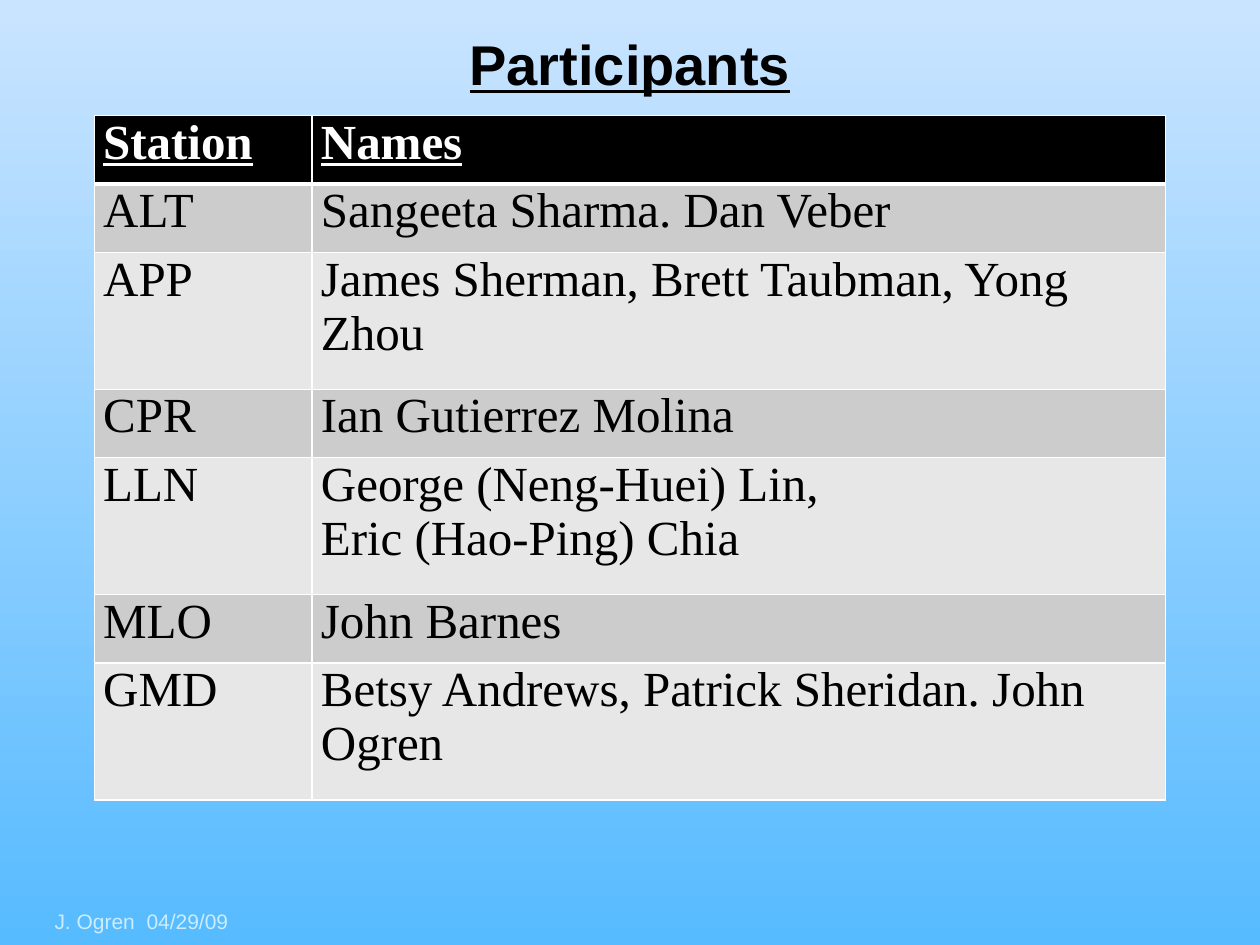
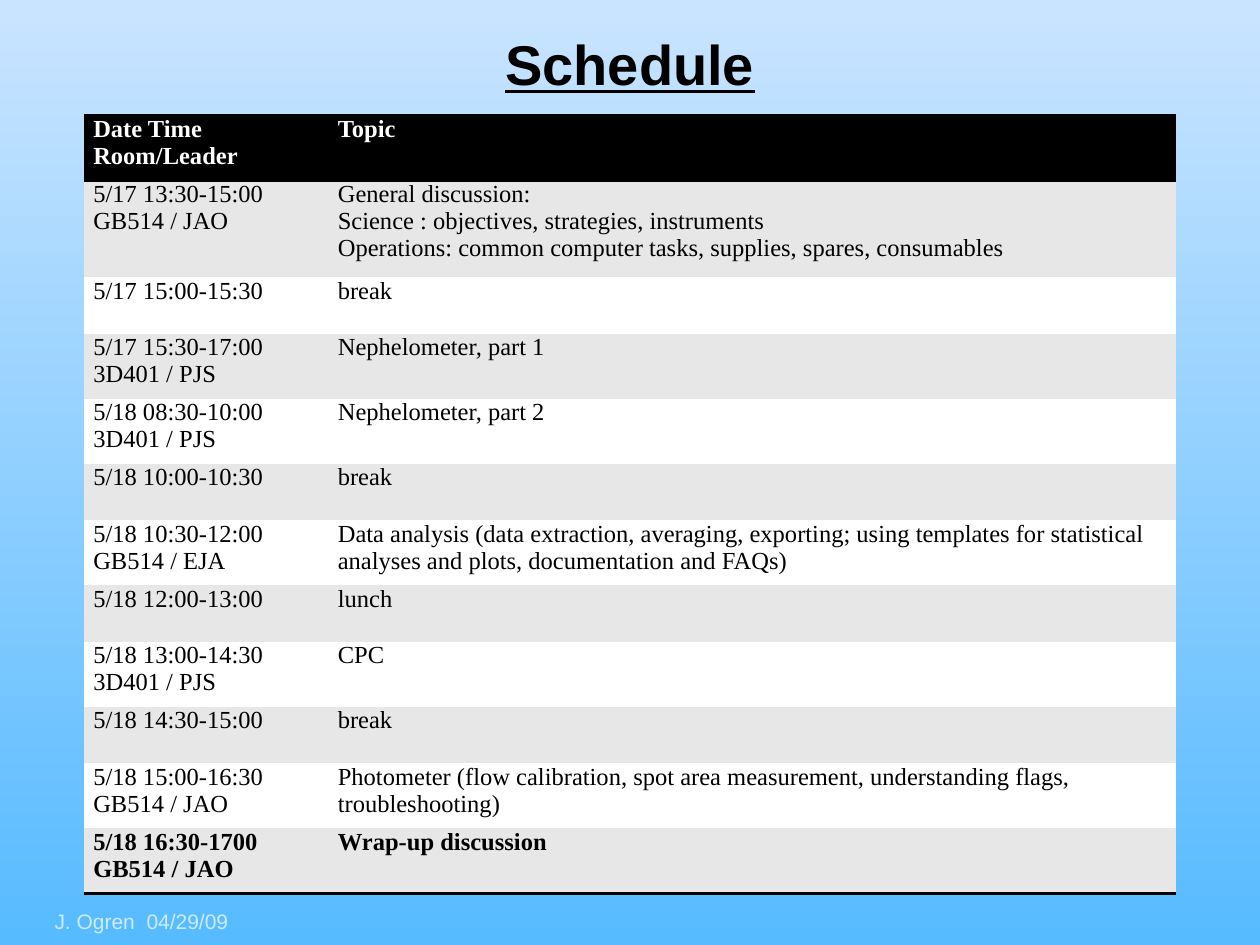
from pptx import Presentation
from pptx.dml.color import RGBColor
from pptx.enum.text import MSO_ANCHOR as Anchor, PP_ALIGN as Align
from pptx.oxml.ns import qn
from pptx.util import Cm, Pt
from lxml.etree import SubElement as Sub

# Shared look
BLACK = RGBColor(0x00, 0x00, 0x00)
WHITE = RGBColor(0xFF, 0xFF, 0xFF)
SILVER = RGBColor(0xCC, 0xCC, 0xCC)
PALE = RGBColor(0xE7, 0xE7, 0xE7)
ICE = RGBColor(0xCC, 0xEC, 0xFF)
SKY_TOP = RGBColor(0xC9, 0xE4, 0xFF)
SKY_BASE = RGBColor(0x57, 0xBB, 0xFF)
SANS, SERIF = "Arial", "Times New Roman"
PLAIN = "{2D5ABB26-0587-4C30-8999-92F81FD0307C}"  # table style without lines
SIDES = {"l": "a:lnL", "r": "a:lnR", "t": "a:lnT", "b": "a:lnB"}
TITLE_BOX = (0.85, 0.43, 23.7, 1.68)
FOOT_BOX = (0.85, 18.2, 5.08, 0.85)

# Participants: station, names, lines of text
PEOPLE = [
    ("Station", "Names", 1),
    ("ALT", "Sangeeta Sharma. Dan Veber", 1),
    ("APP", "James Sherman, Brett Taubman, Yong Zhou", 2),
    ("CPR", "Ian Gutierrez Molina", 1),
    ("LLN", "George (Neng-Huei) Lin,\vEric (Hao-Ping) Chia", 2),
    ("MLO", "John Barnes", 1),
    ("GMD", "Betsy Andrews, Patrick Sheridan. John Ogren", 2),
]
LINE = 1.38  # row height for each line of names

# Schedule: time and room, topic
PLAN = [
    ("Date Time\nRoom/Leader", "Topic"),
    ("5/17 13:30-15:00\nGB514 / JAO",
     "General discussion:\nScience : objectives, strategies, instruments\n"
     "Operations: common computer tasks, supplies, spares, consumables"),
    ("5/17 15:00-15:30", "break"),
    ("5/17 15:30-17:00\n3D401 / PJS", "Nephelometer, part 1"),
    ("5/18 08:30-10:00\n3D401 / PJS", "Nephelometer, part 2"),
    ("5/18 10:00-10:30", "break"),
    ("5/18 10:30-12:00\nGB514 / EJA",
     "Data analysis (data extraction, averaging, exporting; using templates "
     "for statistical analyses and plots, documentation and FAQs)"),
    ("5/18 12:00-13:00", "lunch"),
    ("5/18 13:00-14:30\n3D401 / PJS", "CPC"),
    ("5/18 14:30-15:00", "break"),
    ("5/18 15:00-16:30\nGB514 / JAO",
     "Photometer (flow calibration, spot area measurement, understanding "
     "flags, troubleshooting)"),
    ("5/18 16:30-1700\nGB514 / JAO", "Wrap-up discussion"),
]
HEIGHTS = {1: 1.14, 2: 1.31, 3: 1.95}  # row height by line count


def write(frame, text, font=SERIF, size=14, color=BLACK, bold=False,
          under=False, align=Align.LEFT):
    """Fill a text frame, one paragraph for each line."""
    frame.word_wrap = True
    for i, line in enumerate(text.split("\n")):
        para = frame.add_paragraph() if i else frame.paragraphs[0]
        para.text = line
        para.alignment = align
        for run in para.runs:
            face = run.font
            face.name, face.size, face.bold = font, Pt(size), bold
            face.underline = under
            face.color.rgb = color


def edge(cell, lines):
    """Draw cell borders; lines maps a side to (colour, points)."""
    props = cell._tc.get_or_add_tcPr()
    sides = [s for s in SIDES if s in lines]
    for i, side in enumerate(sides):
        color, width = lines[side]
        line = Sub(props, qn(SIDES[side]), w=str(Pt(width)))
        fill = Sub(line, qn("a:solidFill"))
        Sub(fill, qn("a:srgbClr"), val=str(color))
        props.insert(i, line)


def grid(slide, left, top, widths, heights):
    """Add an unstyled table with the given columns and rows."""
    frame = slide.shapes.add_table(
        len(heights), len(widths), Cm(left), Cm(top),
        Cm(sum(widths)), Cm(sum(heights)))
    for style in frame.element.iter(qn("a:tableStyleId")):
        style.text = PLAIN
    table = frame.table
    table.horz_banding = False
    for col, width in zip(table.columns, widths):
        col.width = Cm(width)
    for row, height in zip(table.rows, heights):
        row.height = Cm(height)
    return table


def put(cell, text, fill, lines, **form):
    """Fill one table cell."""
    cell.margin_left = cell.margin_right = Cm(0.18)
    cell.margin_top = cell.margin_bottom = 0
    cell.fill.solid()
    cell.fill.fore_color.rgb = fill
    edge(cell, lines)
    write(cell.text_frame, text, **form)


def people(slide, left, top):
    """Table of stations and names."""
    heights = [LINE * row[2] for row in PEOPLE]
    table = grid(slide, left, top, (4.39, 17.2), heights)
    for r, row in enumerate(PEOPLE):
        head = r == 0
        fill = BLACK if head else SILVER if r % 2 else PALE
        lines = dict.fromkeys(SIDES, (WHITE, 1))
        if r < 2:
            lines["b" if head else "t"] = (WHITE, 3)
        for c, text in enumerate(row[:2]):
            put(table.cell(r, c), text, fill, lines, size=28, bold=head,
                under=head, color=WHITE if head else BLACK)


def plan(slide, left, top):
    """Table of times and topics."""
    heights = [HEIGHTS[max(t.count("\n") + 1 for t in row)] for row in PLAN]
    table = grid(slide, left, top, (4.93, 17.08), heights)
    rule, last = (BLACK, 2), len(PLAN) - 1
    for r, row in enumerate(PLAN):
        head = r == 0
        fill = BLACK if head else PALE if r % 2 else WHITE
        lines = {"t": rule, "b": rule} if head else {}
        if r == last:
            lines = {"b": rule}
        for c, text in enumerate(row):
            put(table.cell(r, c), text, fill, lines, bold=r in (0, last),
                color=WHITE if head else BLACK)


def page(deck, name):
    """Slide with the shared title and footer."""
    slide = deck.slides.add_slide(deck.slide_layouts[5])
    title = slide.shapes.title
    title.left, title.top, title.width, title.height = map(Cm, TITLE_BOX)
    title.text_frame.vertical_anchor = Anchor.MIDDLE
    write(title.text_frame, name, font=SANS, size=32, bold=True, under=True,
          align=Align.CENTER)
    foot = slide.shapes.add_textbox(*map(Cm, FOOT_BOX))
    write(foot.text_frame, "J. Ogren  04/29/09", font=SANS, size=12,
          color=ICE)
    return slide


def main():
    deck = Presentation()
    deck.slide_width, deck.slide_height = Cm(25.4), Cm(19.05)

    # Sky gradient behind every slide
    sky = deck.slide_master.background.fill
    sky.gradient()
    sky.gradient_angle = 270
    for stop, color, spot in zip(sky.gradient_stops, (SKY_TOP, SKY_BASE),
                                 (0, 1)):
        stop.color.rgb = color
        stop.position = spot

    people(page(deck, "Participants"), 1.9, 2.33)
    plan(page(deck, "Schedule"), 1.7, 2.33)
    deck.save("out.pptx")


if __name__ == "__main__":
    main()
